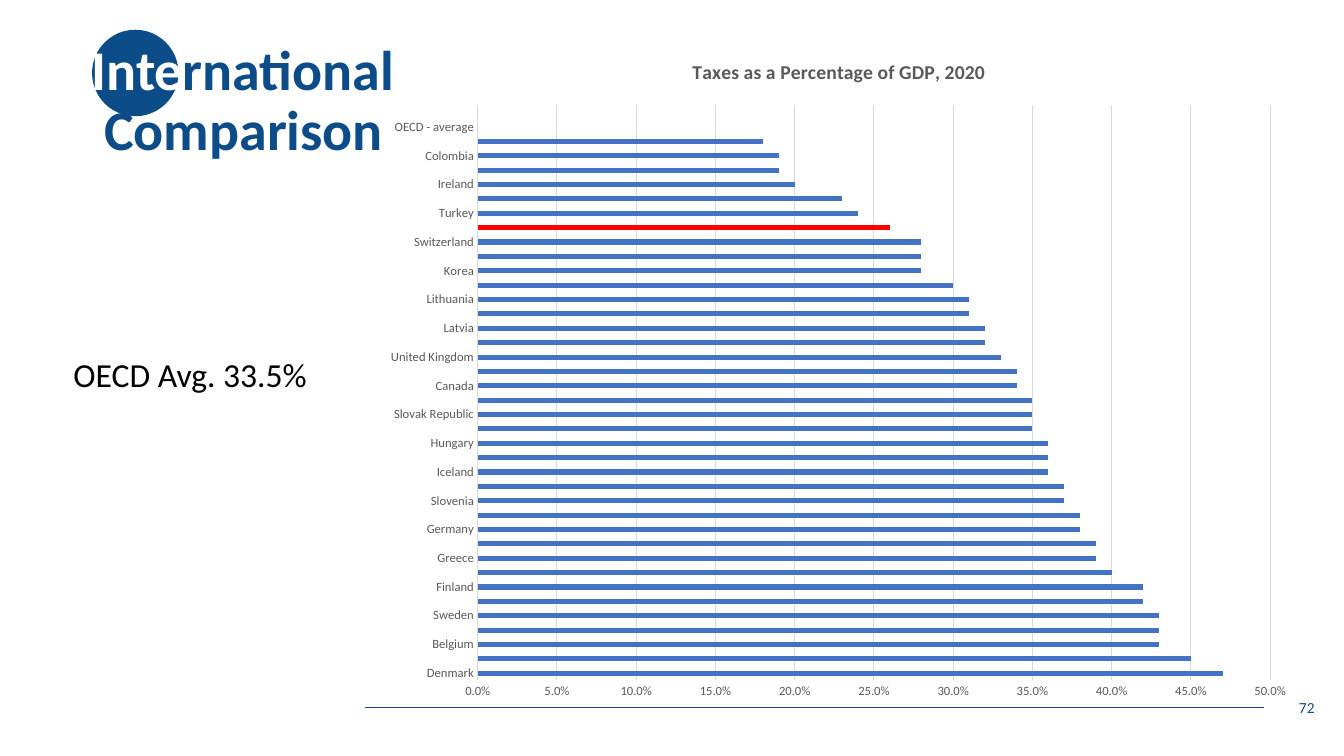
from lxml.etree import SubElement
from pptx import Presentation
from pptx.chart.data import CategoryChartData
from pptx.dml.color import RGBColor
from pptx.enum.chart import XL_CHART_TYPE, XL_TICK_MARK
from pptx.enum.shapes import MSO_CONNECTOR, MSO_SHAPE
from pptx.enum.text import MSO_ANCHOR, PP_ALIGN
from pptx.oxml import parse_xml
from pptx.oxml.ns import nsdecls, qn
from pptx.util import Cm, Pt

NAVY = RGBColor(0x0C, 0x4C, 0x88)
WHITE = RGBColor(0xFF, 0xFF, 0xFF)
BLACK = RGBColor(0, 0, 0)
GREY = RGBColor(0x59, 0x59, 0x59)
PALE = RGBColor(0xD9, 0xD9, 0xD9)
BLUE = RGBColor(0x44, 0x72, 0xC4)
RED = RGBColor(0xFF, 0, 0)
FONT = "Calibri"

TAX_SHARES = [
    ("Denmark", 0.47), ("France", 0.45), ("Belgium", 0.43),
    ("Italy", 0.43), ("Sweden", 0.43), ("Austria", 0.42),
    ("Finland", 0.42), ("Netherlands", 0.4), ("Greece", 0.39),
    ("Norway", 0.39), ("Germany", 0.38), ("Luxembourg", 0.38),
    ("Slovenia", 0.37), ("Spain", 0.37), ("Iceland", 0.36),
    ("Poland", 0.36), ("Hungary", 0.36), ("Portugal", 0.35),
    ("Slovak Republic", 0.35), ("Estonia", 0.35), ("Canada", 0.34),
    ("Czech Republic", 0.34), ("United Kingdom", 0.33),
    ("New Zealand", 0.32), ("Latvia", 0.32), ("Japan", 0.31),
    ("Lithuania", 0.31), ("Israel", 0.3), ("Korea", 0.28),
    ("Australia", 0.28), ("Switzerland", 0.28), ("United States", 0.26),
    ("Turkey", 0.24), ("Costa Rica", 0.23), ("Ireland", 0.2),
    ("Chile", 0.19), ("Colombia", 0.19), ("Mexico", 0.18),
    ("OECD - average", None), ("OECD - average", None),
]
HIGHLIGHT = "United States"
CHART_TITLE = "Taxes as a Percentage of GDP, 2020"
CHART_PLACE = (9.4, 0.94, 23.47, 17.02)
PLOT_PLACE = (12.04, 2.66, 19.97, 14.49)
TITLE_CORNER = (17.36, 1.39)

HEADING = {"size": Pt(40), "bold": True}
TEXTS = [
    {"place": (2.06, 0.74, 29.21, 3.68), "anchor": MSO_ANCHOR.MIDDLE,
     "para": {"line_spacing": 0.9},
     "lines": [[("Inte", WHITE), ("rnational", NAVY)],
               [(" Comparison", NAVY)]],
     "font": HEADING},
    {"place": (25.76, 17.31, 7.62, 1.02), "anchor": MSO_ANCHOR.MIDDLE,
     "para": {"alignment": PP_ALIGN.RIGHT},
     "lines": [[("72", NAVY)]], "font": {"size": Pt(11)}},
    {"place": (1.6, 8.79, 7.29, 1.27), "anchor": MSO_ANCHOR.TOP,
     "para": {}, "lines": [[("OECD Avg. 33.5%", BLACK)]],
     "font": {"size": Pt(24)}},
]


def apply(target, values):
    for name, value in values.items():
        setattr(target, name, value)


def style_font(font, color, values):
    apply(font, {"name": FONT, **values})
    font.color.rgb = color


def lengths(place):
    return [Cm(value) for value in place]


def add_text(page, item):
    box = page.shapes.add_textbox(*lengths(item["place"]))
    apply(box.text_frame,
          {"word_wrap": True, "vertical_anchor": item["anchor"]})
    para = box.text_frame.paragraphs[0]
    apply(para, item["para"])
    for number, line in enumerate(item["lines"]):
        if number:
            para.add_line_break()
        for text, color in line:
            span = para.add_run()
            span.text = text
            style_font(span.font, color, item["font"])


def set_layout(element, index, place, modes):
    left, top, width, height = CHART_PLACE
    shares = {"x": (place[0] - left) / width, "y": (place[1] - top) / height}
    if len(place) == 4:
        shares.update(w=place[2] / width, h=place[3] / height)
    for old in element.findall(qn("c:layout")):
        element.remove(old)
    layout = parse_xml(f"<c:layout {nsdecls('c')}/>")
    manual = SubElement(layout, qn("c:manualLayout"))
    for name, value in {**modes, **shares}.items():
        SubElement(manual, qn(f"c:{name}")).set("val", str(value))
    element.insert(index, layout)


def add_tax_chart(page):
    countries, shares = zip(*TAX_SHARES)
    data = CategoryChartData(number_format="0.0%")
    data.categories = countries
    data.add_series("Series 1", shares)
    chart = page.shapes.add_chart(
        XL_CHART_TYPE.BAR_CLUSTERED, *lengths(CHART_PLACE), data).chart
    style_font(chart.font, BLACK, {"size": Pt(10)})
    apply(chart, {"has_legend": False, "has_title": True})

    title = chart.chart_title
    title.text_frame.text = CHART_TITLE
    span = title.text_frame.paragraphs[0].runs[0]
    style_font(span.font, GREY, {"size": Pt(14), "bold": True})
    edges = {"xMode": "edge", "yMode": "edge"}
    set_layout(title._element, 1, TITLE_CORNER, edges)
    set_layout(chart._chartSpace.chart.plotArea, 0, PLOT_PLACE,
               {"layoutTarget": "inner", **edges})

    plot = chart.plots[0]
    apply(plot, {"gap_width": 182, "vary_by_categories": False})
    series = plot.series[0]
    highlighted = series.points[countries.index(HIGHLIGHT)]
    for bar, color in ((series, BLUE), (highlighted, RED)):
        bar.format.fill.solid()
        bar.format.fill.fore_color.rgb = color

    names, scale = chart.category_axis, chart.value_axis
    for axis in (names, scale):
        apply(axis, {"major_tick_mark": XL_TICK_MARK.NONE,
                     "minor_tick_mark": XL_TICK_MARK.NONE})
        style_font(axis.tick_labels.font, GREY, {"size": Pt(9)})
    apply(scale, {"minimum_scale": 0, "maximum_scale": 0.5,
                  "major_unit": 0.05, "has_major_gridlines": True})
    apply(scale.tick_labels,
          {"number_format": "0.0%", "number_format_is_linked": False})
    scale.format.line.fill.background()
    for line in (names.format.line, scale.major_gridlines.format.line):
        line.color.rgb = PALE
        line.width = Pt(0.75)
    skip = parse_xml(f"<c:tickLblSkip {nsdecls('c')} val='2'/>")
    names._element.find(qn("c:noMultiLvlLbl")).addprevious(skip)


def main():
    deck = Presentation()
    apply(deck, {"slide_width": Cm(33.87), "slide_height": Cm(19.05)})
    page = deck.slides.add_slide(deck.slide_layouts[6])

    rule = page.shapes.add_connector(
        MSO_CONNECTOR.STRAIGHT, *lengths((9.19, 17.82, 31.85, 17.82)))
    rule.line.color.rgb = NAVY
    rule.line.width = Pt(0.5)
    SubElement(rule._element.spPr, qn("a:effectLst"))

    disc = page.shapes.add_shape(
        MSO_SHAPE.OVAL, *lengths((2.32, 0.75, 2.18, 2.18)))
    disc.shadow.inherit = False
    disc.fill.solid()
    disc.fill.fore_color.rgb = NAVY
    disc.line.fill.background()

    heading, page_number, average = TEXTS
    add_text(page, heading)
    add_text(page, page_number)
    add_tax_chart(page)
    add_text(page, average)
    deck.save("out.pptx")


if __name__ == "__main__":
    main()
